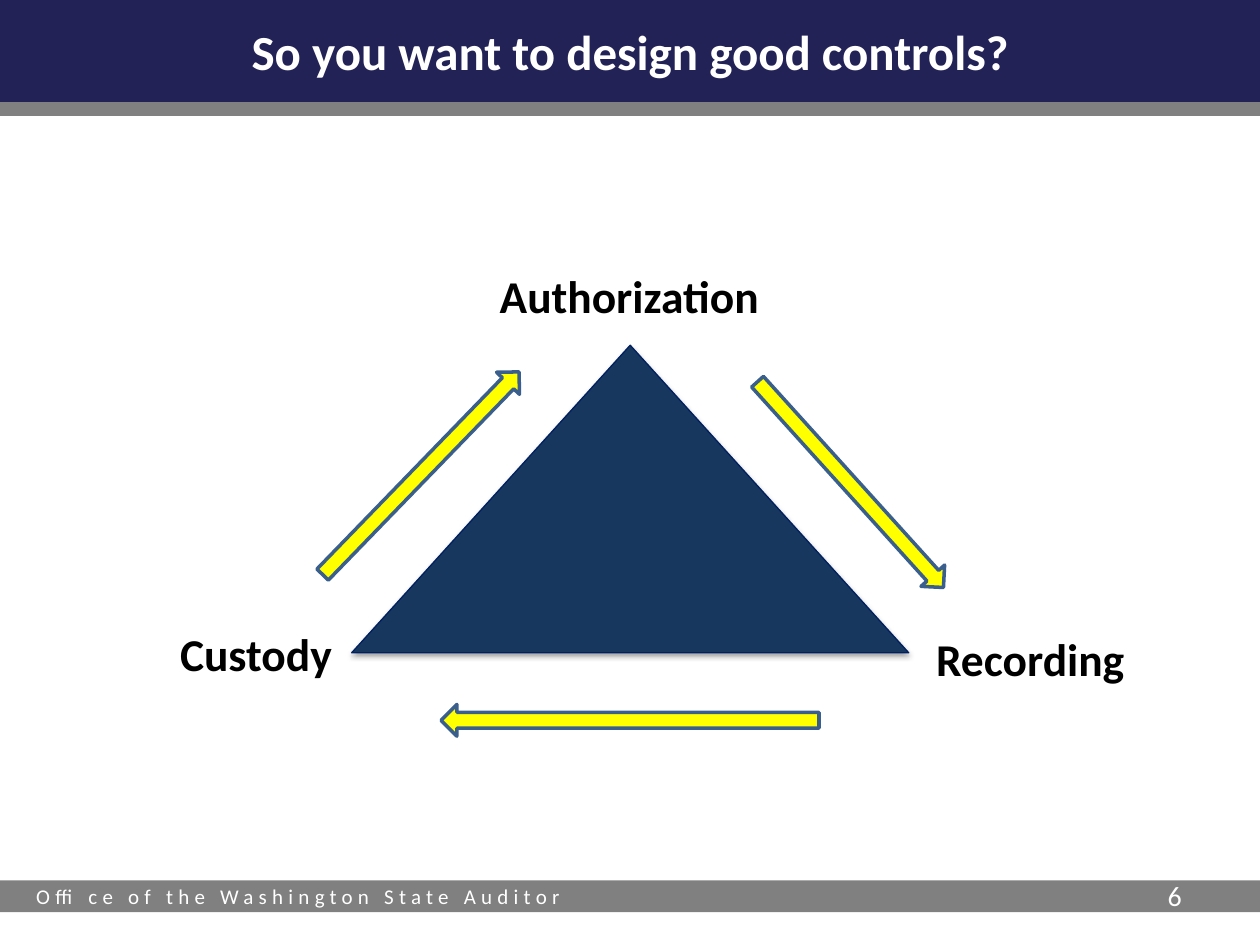
from lxml import etree
from pptx import Presentation
from pptx import util as u
from pptx.dml import color
from pptx.enum import shapes, text
from pptx.oxml import ns

WIDTH, BANNER = 25.4, 2.06
NAVY, GREY, WHITE, BLACK = "232257", "808080", "FFFFFF", "000000"
LABEL = {"size": u.Pt(26), "bold": True}


def rgb(value):
    """Turn a hex string into a colour."""
    return color.RGBColor.from_string(value)


def add_figure(page, kind, box, fill, line=None, weight=0, rotation=0):
    """Add a filled preset shape, outlined only when a line colour is given."""
    figure = page.shapes.add_shape(kind, *map(u.Cm, box))
    figure.shadow.inherit = False
    figure.rotation = rotation
    figure.fill.solid()
    figure.fill.fore_color.rgb = rgb(fill)
    if line:
        figure.line.color.rgb = rgb(line)
        figure.line.width = u.Pt(weight)
    else:
        figure.line.fill.background()
    return figure


def add_shadow(figure, blur, distance, opacity):
    """Give a shape a soft black shadow falling straight down."""
    effects = figure._element.spPr.find(ns.qn("a:effectLst"))
    shadow = etree.SubElement(
        effects, ns.qn("a:outerShdw"), blurRad=str(u.Pt(blur)),
        dist=str(u.Pt(distance)), dir="5400000", rotWithShape="0")
    black = etree.SubElement(shadow, ns.qn("a:srgbClr"), val=BLACK)
    etree.SubElement(black, ns.qn("a:alpha"), val=str(opacity * 1000))


def write(frame, words, ink, style, align=text.PP_ALIGN.LEFT):
    """Write one formatted line into a text frame."""
    para = frame.paragraphs[0]
    para.alignment = align
    span = para.add_run()
    span.text = words
    span.font.color.rgb = rgb(ink)
    for name, value in {"name": "Calibri", **style}.items():
        setattr(span.font, name, value)
    return span


def add_label(page, box, words, ink, style, align=text.PP_ALIGN.LEFT, wrap=True):
    """Add a text box holding one line."""
    frame = page.shapes.add_textbox(*map(u.Cm, box)).text_frame
    frame.word_wrap = wrap
    return write(frame, words, ink, style, align)


def add_title(page, words):
    """Fill the title placeholder and bring it in front of the banner."""
    title = page.shapes.title
    bounds = {"left": 0, "top": 0, "width": u.Cm(WIDTH), "height": u.Cm(BANNER)}
    for name, value in bounds.items():
        setattr(title, name, value)
    frame = title.text_frame
    frame.vertical_anchor = text.MSO_ANCHOR.MIDDLE
    frame.auto_size = text.MSO_AUTO_SIZE.NONE
    write(frame, words, WHITE, {"size": u.Pt(28), "bold": True},
          text.PP_ALIGN.CENTER)
    page.shapes._spTree.append(title._element)


def add_bands(page):
    """Add the banner, its rule and the footer with its texts."""
    bands = [(0, BANNER, NAVY), (BANNER, 0.28, GREY), (17.75, 0.64, GREY)]
    for top, height, fill in bands:
        add_figure(page, shapes.MSO_SHAPE.RECTANGLE, (0, top, WIDTH, height), fill)
    office = add_label(page, (0.48, 17.68, 11.28, 0.76),
                       "Office of the Washington State Auditor", WHITE,
                       {"size": u.Pt(12)}, wrap=False)
    office._r.get_or_add_rPr().set("spc", "300")
    add_label(page, (23.29, 17.58, 1.47, 1.02), "6", WHITE, {"size": u.Pt(16)})


def add_cycle(page):
    """Add the triangle, its corner labels and the arrows around it."""
    triangle = add_figure(page, shapes.MSO_SHAPE.ISOSCELES_TRIANGLE,
                          (7.09, 6.96, 11.23, 6.2), "17375E", "002060", 0.75)
    add_shadow(triangle, 3.1, 1.8, 35)
    corners = [("Authorization", 9.73, 5.28, 5.92, text.PP_ALIGN.CENTER),
               ("Recording", 18.62, 12.6, 4.45, text.PP_ALIGN.LEFT),
               ("Custody", 3.38, 12.5, 4.45, text.PP_ALIGN.LEFT)]
    for words, left, top, width, align in corners:
        add_label(page, (left, top, width, 1.37), words, BLACK, LABEL, align)
    arrows = [(14.35, 9.45, 5.59, 47.9), (8.89, 14.2, 7.62, 180),
              (5.64, 9.22, 5.69, 314.1)]
    for left, top, length, angle in arrows:
        add_figure(page, shapes.MSO_SHAPE.RIGHT_ARROW, (left, top, length, 0.64),
                   "FFFF00", "3A5F8C", 2, angle)


def main():
    """Build the slide and save it."""
    deck = Presentation()
    deck.slide_width, deck.slide_height = u.Cm(WIDTH), u.Cm(19.05)
    page = deck.slides.add_slide(deck.slide_layouts[5])
    add_bands(page)
    add_cycle(page)
    add_title(page, "So you want to design good controls?")
    deck.save("out.pptx")


if __name__ == "__main__":
    main()
